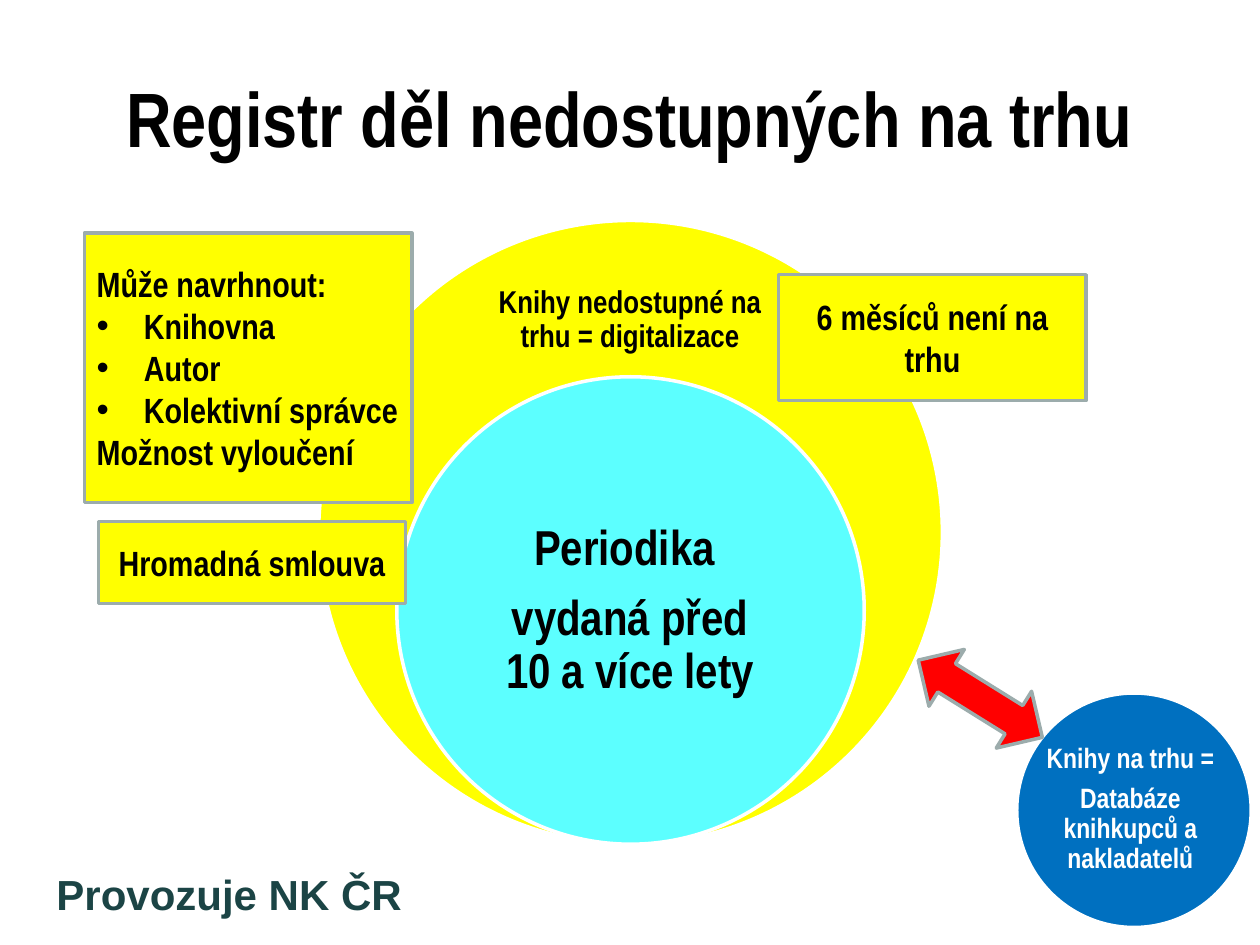
from lxml import etree
from pptx import Presentation
from pptx.dml.color import RGBColor
from pptx.enum import shapes, text
from pptx.oxml.ns import qn
from pptx.util import Pt

COLORS = {
    "black": "000000",
    "white": "FFFFFF",
    "yellow": "FFFF00",
    "cyan": "5CFFFF",
    "blue": "0070C0",
    "red": "FF0000",
    "gray": "9CACAC",
    "teal": "1B4445",
}
NARROW = "Arial Narrow"
CENTER = text.PP_ALIGN.CENTER
LEFT = text.PP_ALIGN.LEFT
BULLET_INDENT = 27


def color(name):
    return RGBColor.from_string(COLORS[name])


def add_bullet(paragraph):
    props = paragraph._p.get_or_add_pPr()
    props.set("marL", str(Pt(BULLET_INDENT)))
    props.set("indent", str(-Pt(BULLET_INDENT)))
    etree.SubElement(props, qn("a:buFont")).set("typeface", "Arial")
    etree.SubElement(props, qn("a:buChar")).set("char", "•")


def write(frame, lines, size, ink="black", font=NARROW, align=CENTER,
          bullets=(), spacing=None, after=None):
    for index, line in enumerate(lines):
        paragraph = frame.paragraphs[0] if index == 0 else frame.add_paragraph()
        paragraph.alignment = align
        if spacing:
            paragraph.line_spacing = spacing
        if after:
            paragraph.space_after = Pt(after)
        if line in bullets:
            add_bullet(paragraph)
        run = paragraph.add_run()
        run.text = line
        run.font.name = font
        run.font.size = Pt(size)
        run.font.bold = True
        run.font.color.rgb = color(ink)


def add_label(slide, box, lines, size, inset=None, wrap=True, **style):
    frame = slide.shapes.add_textbox(*map(Pt, box)).text_frame
    frame.word_wrap = wrap
    frame.vertical_anchor = text.MSO_ANCHOR.MIDDLE
    if inset:
        frame.margin_left = frame.margin_right = Pt(inset)
        frame.margin_top = frame.margin_bottom = Pt(inset)
    write(frame, lines, size, **style)


def add_figure(slide, kind, box, fill, line):
    figure = slide.shapes.add_shape(kind, *map(Pt, box))
    figure.shadow.inherit = False
    figure.fill.solid()
    figure.fill.fore_color.rgb = color(fill)
    figure.line.color.rgb = color(line)
    figure.line.width = Pt(2)
    return figure


def add_circle(slide, center_x, bottom, diameter, fill):
    box = (center_x - diameter / 2, bottom - diameter, diameter, diameter)
    add_figure(slide, shapes.MSO_SHAPE.OVAL, box, fill, "white")


def add_circle_label(slide, box, lines, size, inset, ink="black"):
    add_label(slide, box, lines, size, inset, ink=ink,
              spacing=0.9, after=round(size * 0.35, 1))


def add_note(slide, box, lines, **style):
    note = add_figure(slide, shapes.MSO_SHAPE.RECTANGLE, box, "yellow", "gray")
    note.text_frame.word_wrap = True
    note.text_frame.vertical_anchor = text.MSO_ANCHOR.MIDDLE
    write(note.text_frame, lines, 20, **style)


def main():
    deck = Presentation()
    deck.slide_width, deck.slide_height = Pt(720), Pt(540)
    slide = deck.slides.add_slide(deck.slide_layouts[6])

    add_label(slide, (36, 21.6, 648, 90), ["Registr děl nedostupných na trhu"], 44)

    register_x, register_bottom = 360.3, 482.4
    add_circle(slide, register_x, register_bottom, 356.4, "yellow")
    add_circle_label(slide, (266.4, 152.6, 187.2, 60.5),
                     ["Knihy nedostupné na trhu = digitalizace"], 18, 10)
    add_circle(slide, register_x, register_bottom, 267.1, "cyan")
    add_circle_label(slide, (265.7, 282.2, 188.6, 134),
                     ["Periodika ", "vydaná před 10 a více lety"], 28, 16)

    add_note(slide, (445, 157, 175.7, 72), ["6 měsíců není na trhu"])
    add_note(slide, (56.2, 298, 175.7, 46.8), ["Hromadná smlouva"])
    proposers = ["Knihovna", "Autor", "Kolektivní správce"]
    add_note(slide, (48.2, 133.2, 187.2, 154),
             ["Může navrhnout:", *proposers, "Možnost vyloučení"],
             align=LEFT, bullets=proposers)

    add_label(slide, (25.2, 492.5, 213.8, 36), ["Provozuje NK ČR"], 24,
              wrap=False, ink="teal", font="Arial", align=LEFT)

    add_circle(slide, 648, 530, 134, "blue")
    add_circle_label(slide, (581.8, 404, 128.2, 117.4),
                     ["Knihy na trhu = ", "Databáze knihkupců a nakladatelů"],
                     16, 16, ink="white")

    exchange = add_figure(slide, shapes.MSO_SHAPE.LEFT_RIGHT_ARROW,
                          (518.4, 380.2, 83.5, 38.2), "red", "gray")
    exchange.rotation = 31.9

    deck.save("out.pptx")


if __name__ == "__main__":
    main()
